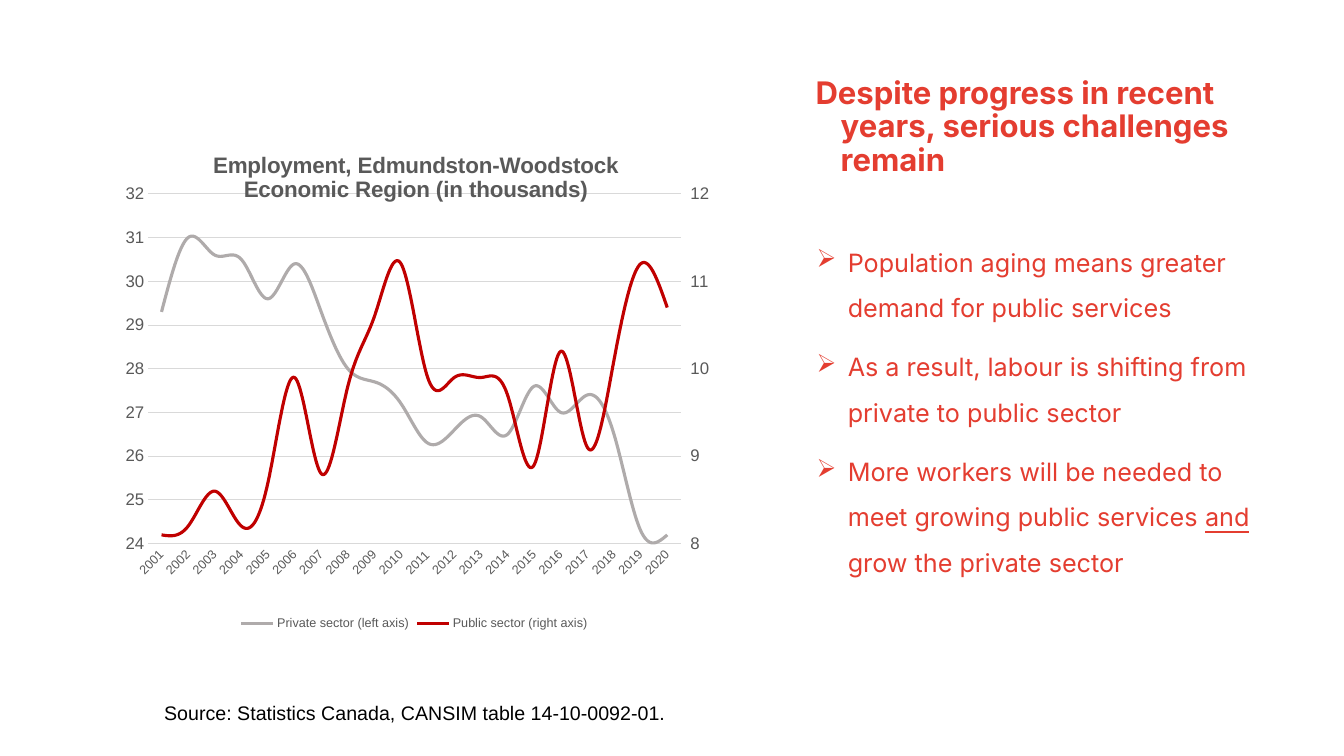
"""Build the slide on public and private employment in Edmundston-Woodstock."""
from copy import deepcopy

from lxml.etree import SubElement
from pptx import Presentation
from pptx.chart.axis import CategoryAxis, ValueAxis
from pptx.chart.data import CategoryChartData
from pptx.dml.color import RGBColor
from pptx.enum.chart import XL_CHART_TYPE as ChartType, XL_LEGEND_POSITION as LegendPosition, XL_TICK_MARK as TickMark
from pptx.oxml.ns import qn
from pptx.util import Inches, Pt

COLORS = {"accent": "E43D30", "text": "000000", "label": "595959", "grid": "D9D9D9",
          "private": "AFABAB", "public": "C00000"}
PRIVATE = [29.3, 31, 30.6, 30.5, 29.6, 30.4, 29.3, 28, 27.7, 27.2,
           26.3, 26.6, 26.9, 26.5, 27.6, 27, 27.4, 26.5, 24.3, 24.2]
PUBLIC = [8.1, 8.2, 8.6, 8.2, 8.7, 9.9, 8.8, 9.8, 10.6, 11.2,
          9.9, 9.9, 9.9, 9.7, 8.9, 10.2, 9.1, 10.1, 11.2, 10.7]
POINTS = [
    [("Population aging means greater demand for public services", False)],
    [("As a result, labour is shifting from private to public sector", False)],
    [("More workers will be needed to meet growing public services ", False),
     ("and", True), (" grow the private sector", False)],
]


def style_font(font, name, size, color, bold=False):
    font.name, font.size, font.bold = name, Pt(size), bold
    font.color.rgb = RGBColor.from_string(COLORS[color])


def set_layout(element, index, **settings):
    for old in element.findall(qn("c:layout")):
        element.remove(old)
    layout = element.makeelement(qn("c:layout"))
    manual = SubElement(layout, qn("c:manualLayout"))
    for tag, value in settings.items():
        SubElement(manual, qn(f"c:{tag}")).set("val", str(value))
    element.insert(index, layout)


presentation = Presentation()
presentation.slide_width, presentation.slide_height = Inches(13.33), Inches(7.5)
slide = presentation.slides.add_slide(presentation.slide_layouts[6])

heading = slide.shapes.add_textbox(Inches(7.74), Inches(0.72), Inches(5.09), Inches(1.3))
heading.text_frame.word_wrap = True
paragraph = heading.text_frame.paragraphs[0]
paragraph.line_spacing = 0.9
properties = paragraph._p.get_or_add_pPr()
properties.set("marL", str(Inches(0.5)))
properties.set("indent", str(Inches(-0.25)))
run = paragraph.add_run()
run.text = "Despite progress in recent years, serious challenges remain"
style_font(run.font, "Inter", 22.2, "accent", True)

points_box = slide.shapes.add_textbox(Inches(7.75), Inches(2.25), Inches(5.09), Inches(4.33))
points_box.text_frame.word_wrap = True
for number, point in enumerate(POINTS):
    paragraph = points_box.text_frame.add_paragraph() if number else points_box.text_frame.paragraphs[0]
    paragraph.line_spacing = 1.5
    paragraph.space_before = Pt(10 if number else 0)
    properties = paragraph._p.get_or_add_pPr()
    properties.set("marL", str(Inches(0.56)))
    properties.set("indent", str(Inches(-0.31)))
    bullet_color = SubElement(properties, qn("a:buClr"))
    SubElement(bullet_color, qn("a:srgbClr")).set("val", COLORS["accent"])
    SubElement(properties, qn("a:buChar")).set("char", "➢")
    for text, underlined in point:
        run = paragraph.add_run()
        run.text = text
        style_font(run.font, "Inter", 18, "accent")
        run.font.underline = underlined

chart_data = CategoryChartData()
chart_data.categories = [str(year) for year in range(2001, 2021)]
chart_data.add_series("Private sector (left axis)", PRIVATE)
chart_data.add_series("Public sector (right axis)", PUBLIC)
chart = slide.shapes.add_chart(ChartType.LINE, Inches(1.04), Inches(1.27), Inches(6.14), Inches(5.03),
                               chart_data).chart
style_font(chart.font, "Arial", 10, "text")

title_frame = chart.chart_title.text_frame
for number, text in enumerate(["Employment, Edmundston-Woodstock", "Economic Region (in thousands)"]):
    paragraph = title_frame.add_paragraph() if number else title_frame.paragraphs[0]
    run = paragraph.add_run()
    run.text = text
    style_font(run.font, "Arial", 16, "label", True)
chart.chart_title.include_in_layout = True
set_layout(chart.element.find(".//" + qn("c:title")), 1, xMode="edge", yMode="edge", x=0.17, y=0.04)

chart.has_legend = True
chart.legend.position = LegendPosition.BOTTOM
chart.legend.include_in_layout = False
style_font(chart.legend.font, "Arial", 9, "label")

for series, color in zip(chart.plots[0].series, ["private", "public"]):
    series.smooth = True
    series.format.line.width = Pt(2.25)
    series.format.line.color.rgb = RGBColor.from_string(COLORS[color])

year_axis, left_axis = chart.category_axis, chart.value_axis
for axis, size in [(year_axis, 9), (left_axis, 12)]:
    axis.major_tick_mark = axis.minor_tick_mark = TickMark.NONE
    style_font(axis.tick_labels.font, "Arial", size, "label")
left_axis.minimum_scale, left_axis.maximum_scale, left_axis.major_unit = 24, 32, 1
left_axis.format.line.fill.background()
for line in (year_axis.format.line, left_axis.major_gridlines.format.line):
    line.width = Pt(0.75)
    line.color.rgb = RGBColor.from_string(COLORS["grid"])
year_axis._element.find(qn("c:txPr")).find(qn("a:bodyPr")).set("rot", str(-45 * 60000))

plot_area = chart.element.find(".//" + qn("c:plotArea"))
set_layout(plot_area, 0, layoutTarget="inner", xMode="edge", yMode="edge", x=0.07, y=0.13, w=0.86, h=0.69)
left_plot = plot_area.find(qn("c:lineChart"))
right_plot = deepcopy(left_plot)
left_plot.remove(left_plot.findall(qn("c:ser"))[1])
right_plot.remove(right_plot.find(qn("c:ser")))
left_plot.addnext(right_plot)

right_years, right_values = deepcopy(year_axis._element), deepcopy(left_axis._element)
left_axis._element.addnext(right_values)
right_values.addnext(right_years)
ids = {"years": "50010", "values": "50020"}
for element, own, crossing in [(right_years, "years", "values"), (right_values, "values", "years")]:
    element.find(qn("c:axId")).set("val", ids[own])
    element.find(qn("c:crossAx")).set("val", ids[crossing])
for element, axis_id in zip(right_plot.findall(qn("c:axId")), ids.values()):
    element.set("val", axis_id)

CategoryAxis(right_years).visible = False
right_axis = ValueAxis(right_values)
right_axis.has_major_gridlines = False
right_axis.minimum_scale, right_axis.maximum_scale, right_axis.major_unit = 8, 12, 1
right_axis.major_tick_mark = TickMark.OUTSIDE
right_axis.tick_labels.number_format = "#,##0"
right_axis.tick_labels.number_format_is_linked = False
right_values.find(qn("c:axPos")).set("val", "r")
right_values.find(qn("c:crosses")).set("val", "max")

source = slide.shapes.add_textbox(Inches(1.53), Inches(6.9), Inches(8.97), Inches(0.34))
source.text_frame.word_wrap = True
run = source.text_frame.paragraphs[0].add_run()
run.text = "Source: Statistics Canada, CANSIM table 14-10-0092-01."
style_font(run.font, "Arial", 14, "text")

presentation.save("out.pptx")
